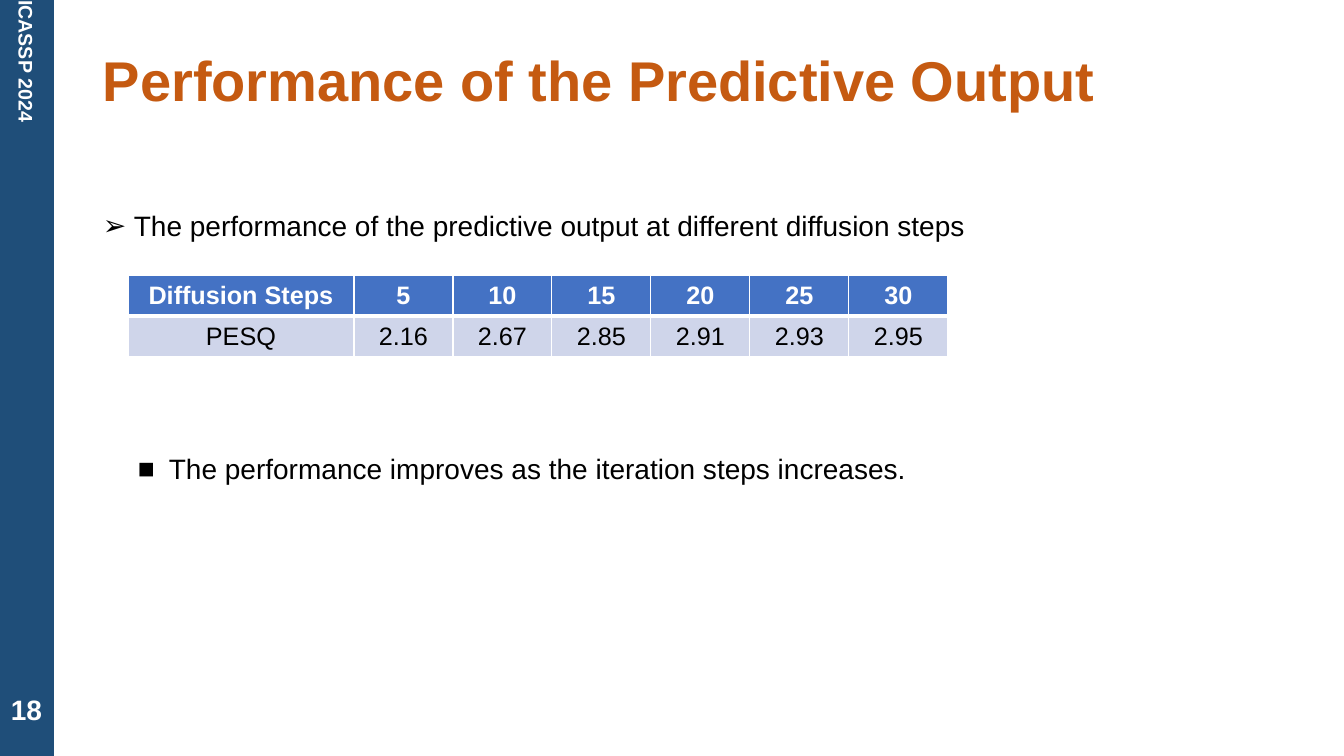
from pptx import Presentation
from pptx.dml.color import RGBColor
from pptx.enum.shapes import MSO_SHAPE
from pptx.enum.text import MSO_ANCHOR, PP_ALIGN
from pptx.oxml.ns import qn
from pptx.util import Pt
from lxml import etree

RECTANGLE = MSO_SHAPE.RECTANGLE
MIDDLE, TOP = MSO_ANCHOR.MIDDLE, MSO_ANCHOR.TOP
LEFT, CENTER = PP_ALIGN.LEFT, PP_ALIGN.CENTER

NAVY = RGBColor(0x1F, 0x4E, 0x79)
ORANGE = RGBColor(0xC5, 0x5A, 0x11)
BLUE = RGBColor(0x44, 0x72, 0xC4)
PALE_BLUE = RGBColor(0xCF, 0xD5, 0xEA)
WHITE = RGBColor(0xFF, 0xFF, 0xFF)
BLACK = RGBColor(0x00, 0x00, 0x00)

SCALE = 914400 / 100.8  # EMU per px


def px(*lengths):
    return [round(length * SCALE) for length in lengths]


def write(frame, text, size=20, color=BLACK, bold=False, align=LEFT,
          anchor=TOP, spacing=None, bullet=None):
    frame.word_wrap = True
    frame.vertical_anchor = anchor
    para = frame.paragraphs[0]
    para.alignment = align
    if spacing:
        para.line_spacing = spacing
    if bullet:
        settings = para._p.get_or_add_pPr()
        indent = px(31)[0]
        settings.set("marL", str(indent))
        settings.set("indent", str(-indent))
        etree.SubElement(settings, qn("a:buFont")).set("typeface", "Arial")
        etree.SubElement(settings, qn("a:buChar")).set("char", bullet)
    span = para.add_run()
    span.text = text
    span.font.name = "Arial"
    span.font.size = Pt(size)
    span.font.bold = bold
    span.font.color.rgb = color


deck = Presentation()
deck.slide_width, deck.slide_height = px(1344, 756)
page = deck.slides.add_slide(deck.slide_layouts[6])

# Sidebar: lower block, then upper block with the vertical label
for top, height in ((682, 74), (0, 682)):
    sidebar = page.shapes.add_shape(RECTANGLE, *px(0, top, 53, height))
    sidebar.shadow.inherit = False
    sidebar.fill.solid()
    sidebar.fill.fore_color.rgb = NAVY
    sidebar.line.color.rgb = NAVY
    sidebar.line.width = Pt(1)
label = sidebar.text_frame
label.margin_top, label.margin_bottom = px(0, 357)
write(label, "ICASSP 2024", size=14, color=WHITE, bold=True, align=CENTER, anchor=MIDDLE)
label._txBody.bodyPr.set("vert", "eaVert")

# Title
title = page.shapes.add_textbox(*px(93, 31, 1159, 104))
write(title.text_frame, "Performance of the Predictive Output", size=40,
      color=ORANGE, bold=True, anchor=MIDDLE, spacing=0.9)

# Page number
number = page.shapes.add_textbox(*px(0, 683, 53, 53))
number.text_frame.margin_left = number.text_frame.margin_right = 0
write(number.text_frame, "18", color=WHITE, bold=True, align=CENTER, anchor=MIDDLE)

# Results table
results = [
    ["Diffusion Steps", "5", "10", "15", "20", "25", "30"],
    ["PESQ", "2.16", "2.67", "2.85", "2.91", "2.93", "2.95"],
]
table = page.shapes.add_table(2, 7, *px(128, 275, 820, 82)).table
for index, column in enumerate(table.columns):
    column.width = px(99 if index else 226)[0]
for row, values in enumerate(results):
    header = row == 0
    table.rows[row].height = px(41)[0]
    for column, value in enumerate(values):
        cell = table.cell(row, column)
        write(cell.text_frame, value, size=18, color=WHITE if header else BLACK,
              bold=header, align=CENTER)
        cell.vertical_anchor = MIDDLE
        settings = cell._tc.get_or_add_tcPr()
        # White borders, thicker between the two rows
        for side in ("lnL", "lnR", "lnT", "lnB"):
            thick = side == ("lnB" if header else "lnT")
            border = etree.SubElement(settings, qn(f"a:{side}"))
            border.set("w", str(Pt(3 if thick else 1)))
            paint = etree.SubElement(border, qn("a:solidFill"))
            etree.SubElement(paint, qn("a:srgbClr")).set("val", str(WHITE))
        cell.fill.solid()
        cell.fill.fore_color.rgb = BLUE if header else PALE_BLUE

# Statements above and below the table
statements = [
    (93, 204, 893, "➢", "The performance of the predictive output at different diffusion steps"),
    (128, 447, 923, "■", "The performance improves as the iteration steps increases."),
]
for left, top, width, bullet, text in statements:
    box = page.shapes.add_textbox(*px(left, top, width, 44))
    write(box.text_frame, text, bullet=bullet)

deck.save("out.pptx")
